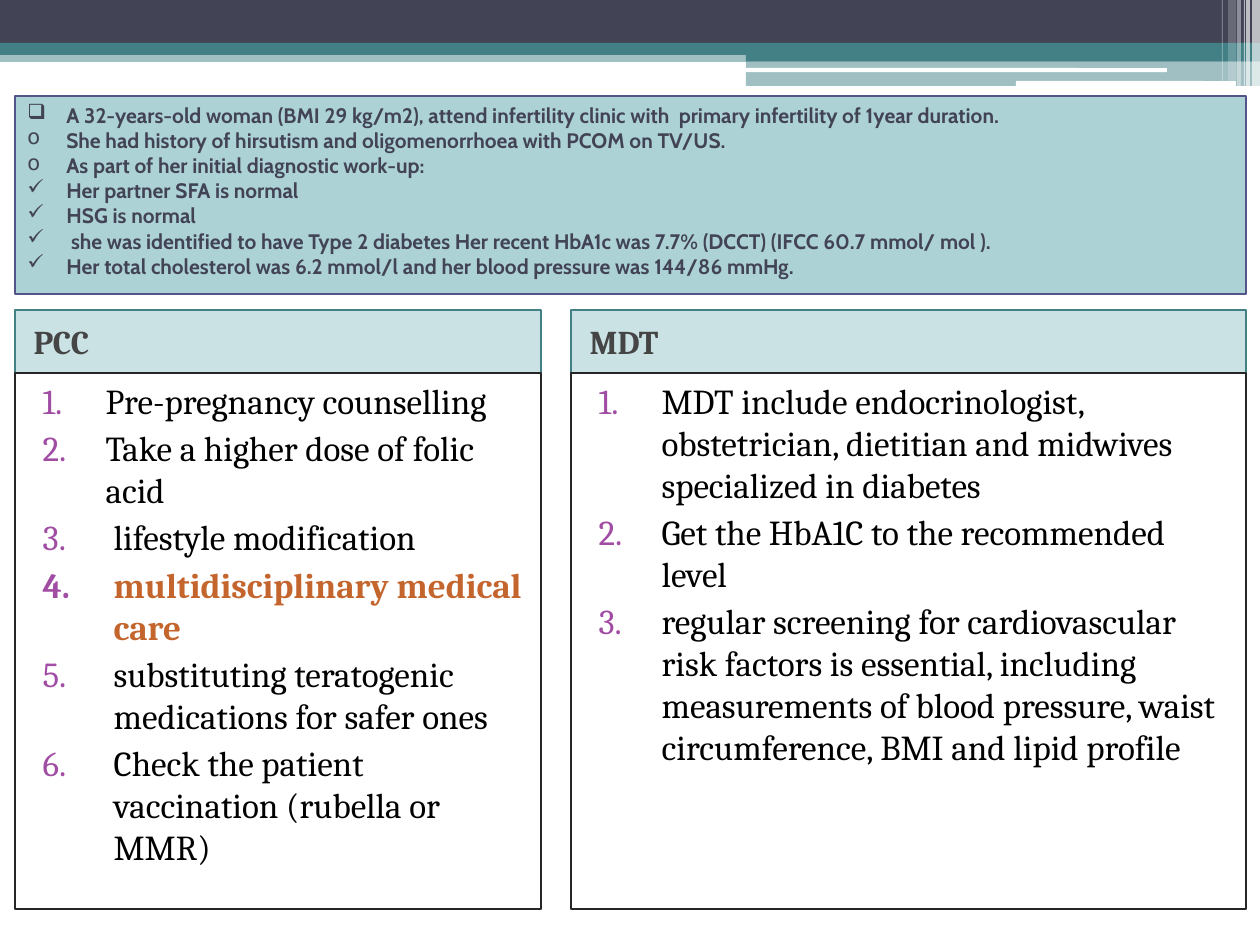
from lxml.etree import SubElement
from pptx import Presentation
from pptx.dml.color import RGBColor
from pptx.enum.shapes import MSO_SHAPE as Preset
from pptx.enum.text import MSO_ANCHOR as Anchor, MSO_AUTO_SIZE as AutoSize, PP_ALIGN as Align
from pptx.oxml.ns import qn
from pptx.util import Pt

EMU_PER_PX = 914400 / 126
COLORS = {
    "navy": "424456", "teal": "438086", "white": "FFFFFF", "black": "000000",
    "heading_fill": "328E97", "heading_text": "454545", "frame": "262626",
    "number": "A04DA3", "accent": "C4652D", "case_fill": "ADD2D6", "case_line": "53548A",
}
NEAR, FAR = (78, 63), (86, 71)


def px(length):
    return round(length * EMU_PER_PX)


def rgb(color):
    return RGBColor.from_string(COLORS[color])


class SlideBuilder:
    serif = "Cambria"
    sans = "Cabin"

    def __init__(self, slide):
        self.slide = slide

    def paint(self, shape, fill=None, opacity=100, line=None, weight=0.75):
        if fill:
            shape.fill.solid()
            shape.fill.fore_color.rgb = rgb(fill)
            if opacity < 100:
                color = shape.fill._xPr.find(qn("a:solidFill"))[0]
                SubElement(color, qn("a:alpha"), val=str(opacity * 1000))
        else:
            shape.fill.background()
        if line:
            shape.line.color.rgb = rgb(line)
            shape.line.width = Pt(weight)
        else:
            shape.line.fill.background()

    def place(self, shape, box):
        shape.left, shape.top, shape.width, shape.height = map(px, box)

    def band(self, box, fill, opacity=100, preset=Preset.RECTANGLE):
        band = self.slide.shapes.add_shape(preset, *map(px, box))
        band.shadow.inherit = False
        self.paint(band, fill, opacity)
        return band

    def frame_text(self, shape, lines, anchor):
        frame = shape.text_frame
        frame.text = "\n".join(lines)
        frame.word_wrap = True
        frame.auto_size = AutoSize.NONE
        frame.vertical_anchor = anchor
        return frame.paragraphs

    def style(self, paragraph, font, size, color, bold, before=0):
        paragraph.alignment = Align.LEFT
        paragraph.space_before = Pt(before)
        for run in paragraph.runs:
            run.font.name = font
            run.font.size = Pt(size)
            run.font.bold = bold
            run.font.color.rgb = rgb(color)

    def indent(self, paragraph, margin, hanging=0):
        properties = paragraph._p.get_or_add_pPr()
        properties.set("marL", str(px(margin)))
        properties.set("indent", str(-px(hanging)))
        return properties

    def heading(self, idx, box, wording):
        heading = self.slide.placeholders[idx]
        self.place(heading, box)
        self.paint(heading, "heading_fill", 25, "teal", 1)
        for paragraph in self.frame_text(heading, [wording], Anchor.MIDDLE):
            self.style(paragraph, self.serif, 19, "heading_text", True, 3)
            self.indent(paragraph, 6)

    def numbered_list(self, idx, box, items):
        body = self.slide.placeholders[idx]
        self.place(body, box)
        self.paint(body, line="frame")
        paragraphs = self.frame_text(body, [item[0] for item in items], Anchor.TOP)
        for paragraph, (_, indents, color) in zip(paragraphs, items):
            self.style(paragraph, self.serif, 20, color, color == "accent", 3)
            properties = self.indent(paragraph, *indents)
            number_color = SubElement(properties, qn("a:buClr"))
            SubElement(number_color, qn("a:srgbClr"), val=COLORS["number"])
            SubElement(properties, qn("a:buFont"), typeface=self.sans)
            SubElement(properties, qn("a:buAutoNum"), type="arabicPeriod")

    def case_box(self, box, findings):
        case = self.band(box, "case_fill")
        self.paint(case, "case_fill", line="case_line")
        paragraphs = self.frame_text(case, [text for _, text in findings], Anchor.TOP)
        for paragraph, (mark, _) in zip(paragraphs, findings):
            self.style(paragraph, self.sans, 12, "navy", True)
            properties = self.indent(paragraph, 39, 39)
            SubElement(properties, qn("a:buChar"), char=mark)


BANDS = [
    ((0, 50, 1260, 12), "teal", 50),
    ((0, 0, 1260, 43), "navy", 100),
    ((0, 43, 1260, 12), "teal", 100),
    ((746, 49, 514, 12), "teal", 100),
    ((746, 61, 514, 25), "teal", 50),
]
PILLS = [(745, 68, 422, 4), (1016, 81, 220, 5)]
STRIPES = [(1252, 8, 86, 65), (1246, 4, 86, 65), (1244, 1, 86, 60),
           (1237, 4, 86, 40), (1228, 8, 81, 20), (1222, 1, 81, 30)]
CASE = [
    ("❑", "A 32-years-old woman (BMI 29 kg/m2), attend infertility clinic with  primary infertility of 1year duration."),
    ("o", "She had history of hirsutism and oligomenorrhoea with PCOM on TV/US."),
    ("o", "As part of her initial diagnostic work-up:"),
    ("✓", "Her partner SFA is normal"),
    ("✓", "HSG is normal"),
    ("✓", " she was identified to have Type 2 diabetes Her recent HbA1c was 7.7% (DCCT) (IFCC 60.7 mmol/ mol )."),
    ("✓", "Her total cholesterol was 6.2 mmol/l and her blood pressure was 144/86 mmHg."),
]
COUNSELLING = [
    ("Pre-pregnancy counselling", NEAR, "black"),
    ("Take a higher dose of folic acid", NEAR, "black"),
    ("lifestyle modification", FAR, "black"),
    ("multidisciplinary medical care", FAR, "accent"),
    ("substituting teratogenic medications for safer ones", FAR, "black"),
    ("Check the patient  vaccination (rubella or MMR)", FAR, "black"),
]
TEAM = [
    ("MDT include endocrinologist, obstetrician, dietitian and midwives specialized in diabetes", NEAR, "black"),
    ("Get the HbA1C to the recommended level", NEAR, "black"),
    ("regular screening for cardiovascular risk factors is essential, including measurements of "
     "blood pressure, waist circumference, BMI and lipid profile", NEAR, "black"),
]
COLUMNS = [(1, 15, 526, "PCC", COUNSELLING), (3, 571, 675, "MDT", TEAM)]


def main():
    deck = Presentation()
    deck.slide_width, deck.slide_height = px(1260), px(945)
    slide = deck.slides.add_slide(deck.slide_layouts[4])
    title = slide.shapes.title._element
    title.getparent().remove(title)
    builder = SlideBuilder(slide)

    for box, fill, opacity in BANDS:
        builder.band(box, fill, opacity)
    for box in PILLS:
        builder.band(box, "white", preset=Preset.ROUNDED_RECTANGLE)
    for left, width, height, opacity in STRIPES:
        builder.band((left, 0, width, height), "white", opacity)
    for idx, left, width, wording, items in COLUMNS:
        builder.heading(idx, (left, 310, width, 63), wording)
        builder.numbered_list(idx + 1, (left, 373, width, 536), items)
    builder.case_box((15, 96, 1231, 198), CASE)

    deck.save("out.pptx")


if __name__ == "__main__":
    main()
